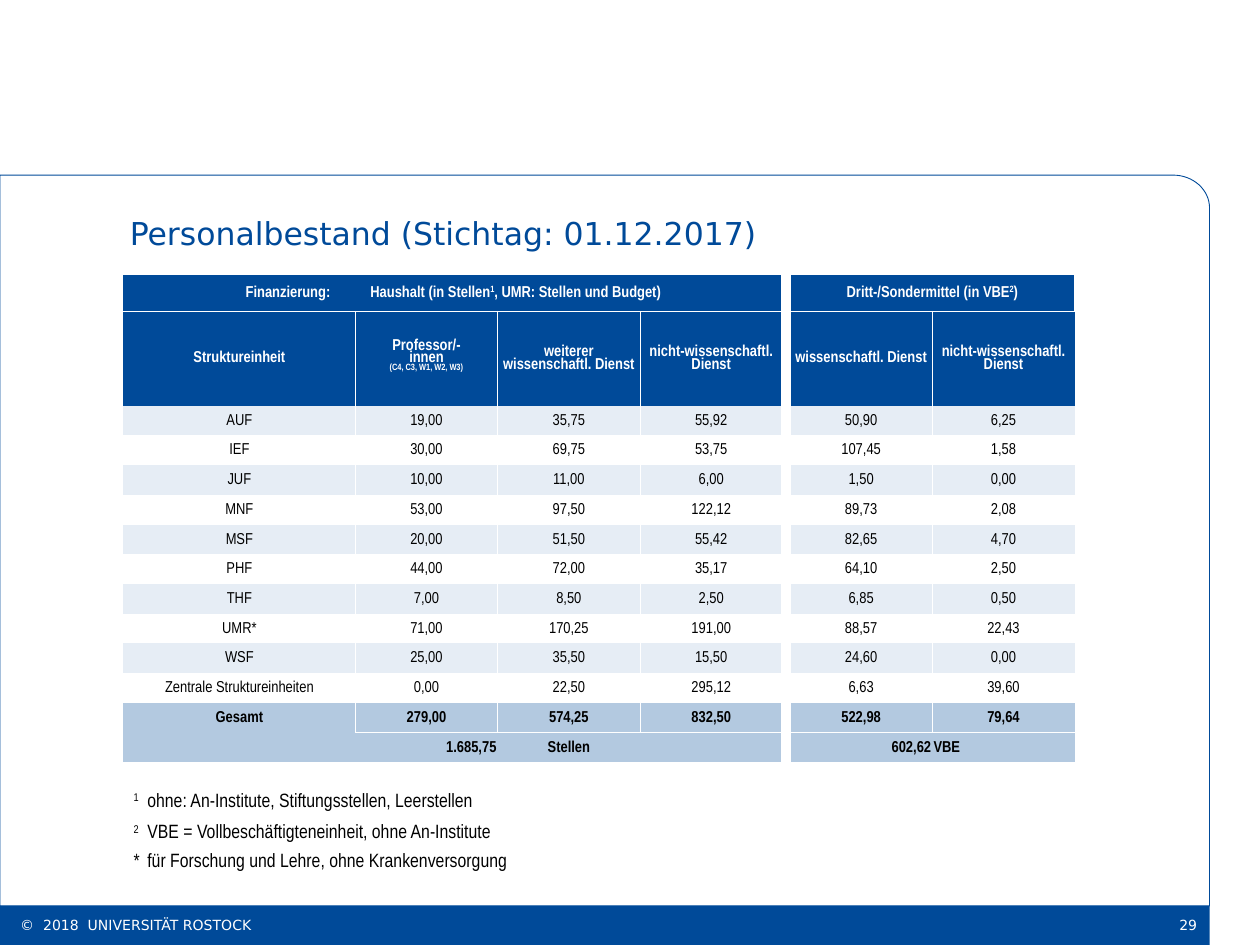
import math
from pptx import Presentation
from pptx import util as u
from pptx.dml.color import RGBColor
from pptx.enum import shapes, text
from pptx.oxml.ns import qn
from lxml import etree

BLUE = RGBColor(0x00, 0x4A, 0x99)
PALE = RGBColor(0xE6, 0xED, 0xF5)
MID = RGBColor(0xB3, 0xC9, 0xE0)
WHITE = RGBColor(0xFF, 0xFF, 0xFF)
BLACK = RGBColor(0, 0, 0)
SANS, NARROW = "DejaVu Sans", "Arial Narrow"
LEFT, CENTER, RIGHT = text.PP_ALIGN.LEFT, text.PP_ALIGN.CENTER, text.PP_ALIGN.RIGHT

TITLE = "Personalbestand (Stichtag: 01.12.2017)"
COPYRIGHT = "©  2018  UNIVERSITÄT ROSTOCK"
PAGE = "29"
NOTES = [
    "^1^\tohne: An-Institute, Stiftungsstellen, Leerstellen",
    "^2^\tVBE = Vollbeschäftigteneinheit, ohne An-Institute",
    "*\tfür Forschung und Lehre, ohne Krankenversorgung",
]
ROWS = [
    ["Finanzierung:\tHaushalt (in Stellen^1^, UMR: Stellen und Budget)", "", "", "",
     "Dritt-/Sondermittel (in VBE^2^)", ""],
    ["Struktureinheit", "Professor/-\ninnen\n^(C4, C3, W1, W2, W3)^",
     "weiterer wissenschaftl. Dienst", "nicht-wissenschaftl. Dienst",
     "wissenschaftl. Dienst", "nicht-wissenschaftl. Dienst"],
    ["AUF", "19,00", "35,75", "55,92", "50,90", "6,25"],
    ["IEF", "30,00", "69,75", "53,75", "107,45", "1,58"],
    ["JUF", "10,00", "11,00", "6,00", "1,50", "0,00"],
    ["MNF", "53,00", "97,50", "122,12", "89,73", "2,08"],
    ["MSF", "20,00", "51,50", "55,42", "82,65", "4,70"],
    ["PHF", "44,00", "72,00", "35,17", "64,10", "2,50"],
    ["THF", "7,00", "8,50", "2,50", "6,85", "0,50"],
    ["UMR*", "71,00", "170,25", "191,00", "88,57", "22,43"],
    ["WSF", "25,00", "35,50", "15,50", "24,60", "0,00"],
    ["Zentrale Struktureinheiten", "0,00", "22,50", "295,12", "6,63", "39,60"],
    ["Gesamt", "279,00", "574,25", "832,50", "522,98", "79,64"],
    ["", "1.685,75", "Stellen", "", "602,62", "VBE"],
]
GAP = 4
LAST = len(ROWS) - 1
COLS = [1.84] + [1.13] * 3 + [0.06] + [1.13] * 2
HEIGHTS = [0.29, 0.75] + [0.236] * (len(ROWS) - 2)
LAST_ALIGN = {1: RIGHT, 5: RIGHT, 6: LEFT}
FRAME_R, FRAME_TOP, BAR_TOP = 9.6, 1.39, 7.19
CORNER_W, CORNER_H = 0.29, 0.26


def style(r, size, font, color, bold=False):
    r.font.size, r.font.name, r.font.bold = u.Pt(size), font, bold
    r.font.color.rgb = color


def write(tf, content, size, font, color, bold=False, align=LEFT, spacing=None, tab=None):
    for i, line in enumerate(content.split("\n")):
        p = tf.paragraphs[0] if i == 0 else tf.add_paragraph()
        p.alignment = align
        p.space_before = u.Pt(0)
        if spacing:
            p.line_spacing = spacing
        if tab:
            tabs = etree.SubElement(p._p.get_or_add_pPr(), qn("a:tabLst"))
            etree.SubElement(tabs, qn("a:tab"), pos=str(u.Inches(tab)), algn="l")
        for j, piece in enumerate(line.split("^")):
            if piece:
                r = p.add_run()
                r.text = piece
                style(r, size, font, color, bold)
                if j % 2:
                    r.font._element.set("baseline", "30000")
        if not line:
            etree.SubElement(p._p, qn("a:endParaRPr"), sz=str(size * 100))


def set_cell(cell, fill, margins, anchor, edges):
    cell.margin_left, cell.margin_top, cell.margin_right, cell.margin_bottom = map(u.Inches, margins)
    cell.vertical_anchor = anchor
    tcPr = cell._tc.get_or_add_tcPr()
    for side, width in zip("LRTB", edges):
        ln = etree.SubElement(tcPr, qn("a:ln" + side), w=str(u.Pt(width)))
        if width:
            solid = etree.SubElement(ln, qn("a:solidFill"))
            etree.SubElement(solid, qn("a:srgbClr"), val=str(WHITE))
        else:
            etree.SubElement(ln, qn("a:noFill"))
    cell.fill.solid()
    cell.fill.fore_color.rgb = fill


def add_table(slide, x, y, widths, heights):
    box = [u.Inches(v) for v in (x, y, sum(widths), sum(heights))]
    table = slide.shapes.add_table(len(heights), len(widths), *box).table
    table.first_row = table.horz_banding = False
    for col, w in zip(table.columns, widths):
        col.width = u.Inches(w)
    for row, h in zip(table.rows, heights):
        row.height = u.Inches(h)
    return table


def vertical_edge(i, edge):
    if edge in (GAP, GAP + 1):
        return 1.5
    return 0 if i == LAST or edge in (0, len(COLS)) else 0.5


def row_fill(i):
    if i < 2:
        return BLUE
    if i >= LAST - 1:
        return MID
    return WHITE if i % 2 else PALE


def add_staff_table(slide):
    table = add_table(slide, 0.98, 2.18, COLS, HEIGHTS)
    table.cell(0, 0).merge(table.cell(0, GAP - 1))
    table.cell(0, GAP + 1).merge(table.cell(0, GAP + 2))
    for i, row in enumerate(ROWS):
        for j, content in enumerate(row[:GAP] + [""] + row[GAP:]):
            cell = table.cell(i, j)
            tabbed = "\t" in content
            ruled = j not in (0, GAP)
            top = 0.5 if i == 1 and j != GAP or i == LAST and ruled else 0
            bottom = 0.5 if i == 0 and j != GAP or i == LAST - 1 and ruled else 0
            set_cell(cell, WHITE if j == GAP else row_fill(i),
                     (0.97 if tabbed else 0.01, 0.01, 0.01, 0), text.MSO_ANCHOR.MIDDLE,
                     (vertical_edge(i, j), vertical_edge(i, j + 1), top, bottom))
            align = LEFT if tabbed else LAST_ALIGN.get(j, CENTER) if i == LAST else CENTER
            write(cell.text_frame, content, 9, NARROW, WHITE if i < 2 else BLACK,
                  i < 2 or i >= LAST - 1, align, 0.85 if i == 1 else None,
                  0.99 if tabbed else None)


def add_notes(slide):
    table = add_table(slide, 1.06, 6.19, [4.19], [0.25, 0.25, 0.23])
    for i, note in enumerate(NOTES):
        cell = table.cell(i, 0)
        set_cell(cell, WHITE, (0, 0, 0, 0), text.MSO_ANCHOR.BOTTOM, (0, 0, 0, 0))
        write(cell.text_frame, note, 11, NARROW, BLACK, tab=0.11)


def add_frame(slide):
    bar = slide.shapes.add_shape(shapes.MSO_SHAPE.RECTANGLE, 0, u.Inches(BAR_TOP),
                                 u.Inches(FRAME_R), u.Inches(7.5 - BAR_TOP))
    bar.fill.solid()
    bar.fill.fore_color.rgb = BLUE
    bar.line.fill.background()
    angles = [math.pi / 2 * k / 16 for k in range(17)]
    points = [(FRAME_R - CORNER_W * (1 - math.sin(a)), FRAME_TOP + CORNER_H * (1 - math.cos(a)))
              for a in angles] + [(FRAME_R, BAR_TOP), (0, BAR_TOP)]
    builder = slide.shapes.build_freeform(0, u.Inches(FRAME_TOP), scale=1.0)
    builder.add_line_segments([(u.Inches(x), u.Inches(y)) for x, y in points], close=True)
    frame = builder.convert_to_shape()
    frame.fill.background()
    frame.line.color.rgb = BLUE
    frame.line.width = u.Pt(0.5)
    for sp in (bar, frame):
        sp.shadow.inherit = False


def add_footer(slide, content, x, w, inset, align):
    tf = slide.shapes.add_textbox(*map(u.Inches, (x, 7.18, w, 0.32))).text_frame
    tf.word_wrap = True
    tf.margin_left = u.Inches(inset)
    tf.vertical_anchor = text.MSO_ANCHOR.MIDDLE
    write(tf, content, 8, SANS, WHITE, align=align)


def main():
    prs = Presentation()
    prs.slide_width, prs.slide_height = u.Inches(10), u.Inches(7.5)
    slide = prs.slides.add_slide(prs.slide_layouts[5])
    add_frame(slide)
    title = slide.shapes.title
    title.left, title.top, title.width, title.height = map(u.Inches, (0.93, 1.65, 8.29, 0.4))
    title.text_frame.auto_size = text.MSO_AUTO_SIZE.NONE
    write(title.text_frame, TITLE, 18, SANS, BLUE)
    add_notes(slide)
    add_footer(slide, PAGE, 8.83, 0.77, 0.1, RIGHT)
    add_footer(slide, COPYRIGHT, 0.16, 8.48, 0, LEFT)
    add_staff_table(slide)
    prs.save("out.pptx")


if __name__ == "__main__":
    main()
